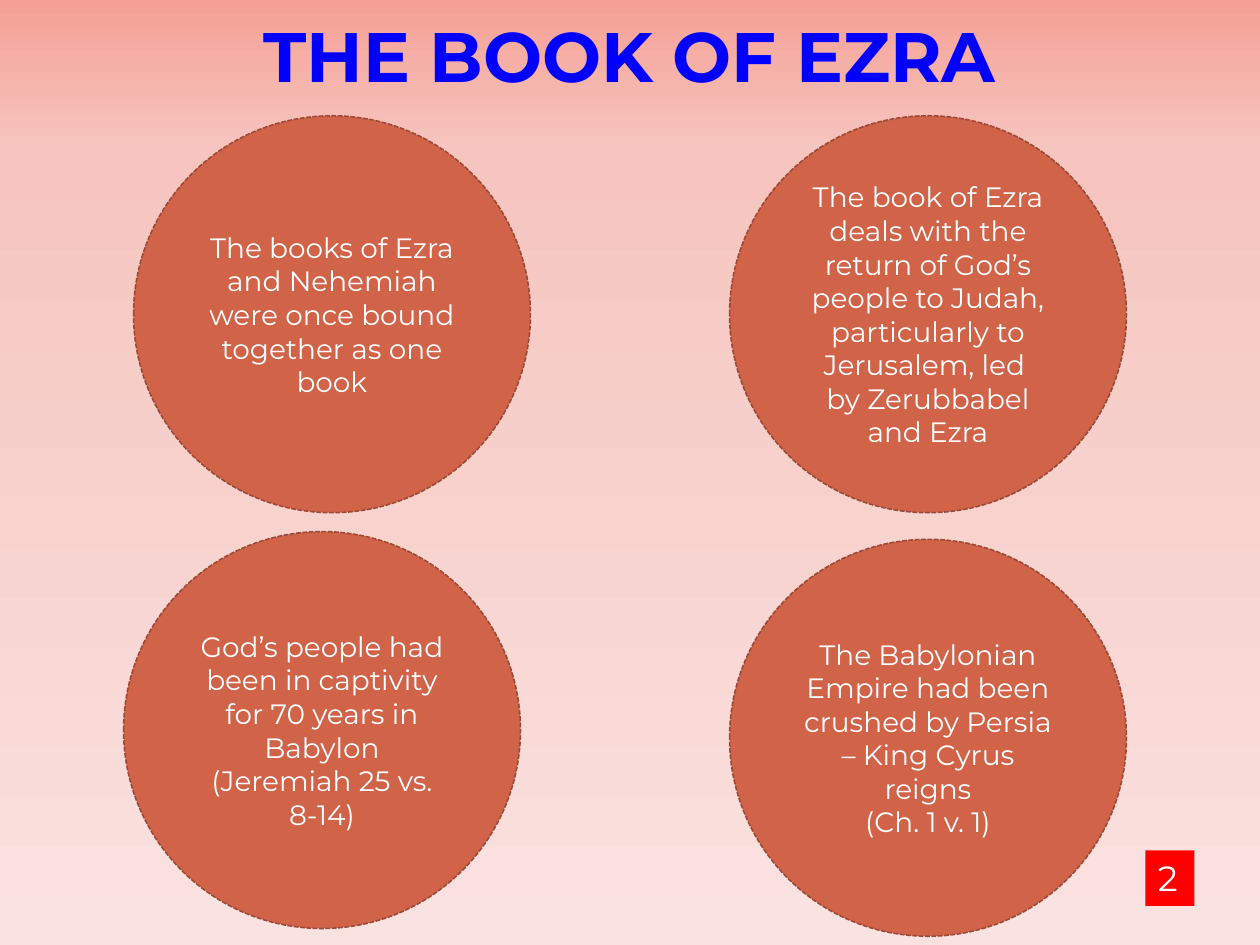
from copy import deepcopy

from pptx import Presentation
from pptx.dml.color import RGBColor
from pptx.enum.dml import MSO_LINE
from pptx.enum.shapes import MSO_SHAPE
from pptx.enum.text import MSO_ANCHOR, MSO_AUTO_SIZE, PP_ALIGN

OVAL, RECTANGLE = MSO_SHAPE.OVAL, MSO_SHAPE.RECTANGLE
SQUARE_DOT = MSO_LINE.SQUARE_DOT
TOP, MIDDLE = MSO_ANCHOR.TOP, MSO_ANCHOR.MIDDLE
NO_AUTOFIT = MSO_AUTO_SIZE.NONE
LEFT, CENTER = PP_ALIGN.LEFT, PP_ALIGN.CENTER

from pptx.util import Pt

BLUE = RGBColor(0x00, 0x00, 0xFF)
RED = RGBColor(0xFF, 0x00, 0x00)
WHITE = RGBColor(0xFF, 0xFF, 0xFF)
TERRACOTTA = RGBColor(0xD1, 0x63, 0x49)
RUST = RGBColor(0x9B, 0x49, 0x36)
SKY = [
    (0, RGBColor(0xF4, 0xA0, 0x95)),
    (0.16, RGBColor(0xF6, 0xC5, 0xBF)),
    (1, RGBColor(0xFA, 0xE2, 0xE0)),
]

FONT = "Montserrat"
DIAMETER = 226.8
FACTS = [
    (76.3, 66.2, ["The books of Ezra and Nehemiah were once bound together as one book"]),
    (416.9, 66.2, [
        "The book of Ezra deals with the return of God’s people to Judah, "
        "particularly to Jerusalem, led ",
        "by Zerubbabel and Ezra",
    ]),
    (70.6, 303.8, [
        "God’s people had been in captivity for 70 years in Babylon",
        "(Jeremiah 25 vs. 8-14)",
    ]),
    (416.9, 308.2, [
        "The Babylonian Empire had been crushed by Persia – King Cyrus reigns",
        "(Ch. 1 v. 1)",
    ]),
]


def paint_background(slide):
    fill = slide.background.fill
    fill.gradient()
    fill.gradient_angle = 270
    stop_list = slide.element.xpath(".//a:gsLst")[0]
    stop_list.append(deepcopy(stop_list[0]))
    for stop, (position, color) in zip(fill.gradient_stops, SKY):
        stop.position = position
        stop.color.rgb = color


def write(shape, lines, size, color, align, anchor, bold=False):
    frame = shape.text_frame
    frame.word_wrap = True
    frame.auto_size = NO_AUTOFIT
    frame.vertical_anchor = anchor
    frame.text = "\n".join(lines)
    for paragraph in frame.paragraphs:
        paragraph.alignment = align
        font = paragraph.font
        font.name = FONT
        font.size = Pt(size)
        font.bold = bold
        font.color.rgb = color


def add_title(slide, text):
    title = slide.shapes.title
    title.left, title.top = Pt(76.3), Pt(3.6)
    title.width, title.height = Pt(566.6), Pt(55.4)
    write(title, [text], 40, BLUE, CENTER, TOP, bold=True)


def add_filled(slide, preset, left, top, width, height, color):
    shape = slide.shapes.add_shape(preset, Pt(left), Pt(top), Pt(width), Pt(height))
    shape.shadow.inherit = False
    shape.fill.solid()
    shape.fill.fore_color.rgb = color
    return shape


def add_page_number(slide, number):
    badge = add_filled(slide, RECTANGLE, 654.5, 486, 28.1, 31.7, RED)
    badge.line.fill.background()
    write(badge, [number], 20, WHITE, LEFT, TOP)


def add_fact(slide, left, top, lines):
    circle = add_filled(slide, OVAL, left, top, DIAMETER, DIAMETER, TERRACOTTA)
    circle.line.color.rgb = RUST
    circle.line.width = Pt(0.9)
    circle.line.dash_style = SQUARE_DOT
    write(circle, lines, 16, WHITE, CENTER, MIDDLE)


def main():
    deck = Presentation()
    deck.slide_width, deck.slide_height = Pt(720), Pt(540)
    slide = deck.slides.add_slide(deck.slide_layouts[5])
    paint_background(slide)
    add_title(slide, "THE BOOK OF EZRA")
    add_page_number(slide, "2")
    for left, top, lines in FACTS:
        add_fact(slide, left, top, lines)
    deck.save("out.pptx")


if __name__ == "__main__":
    main()
